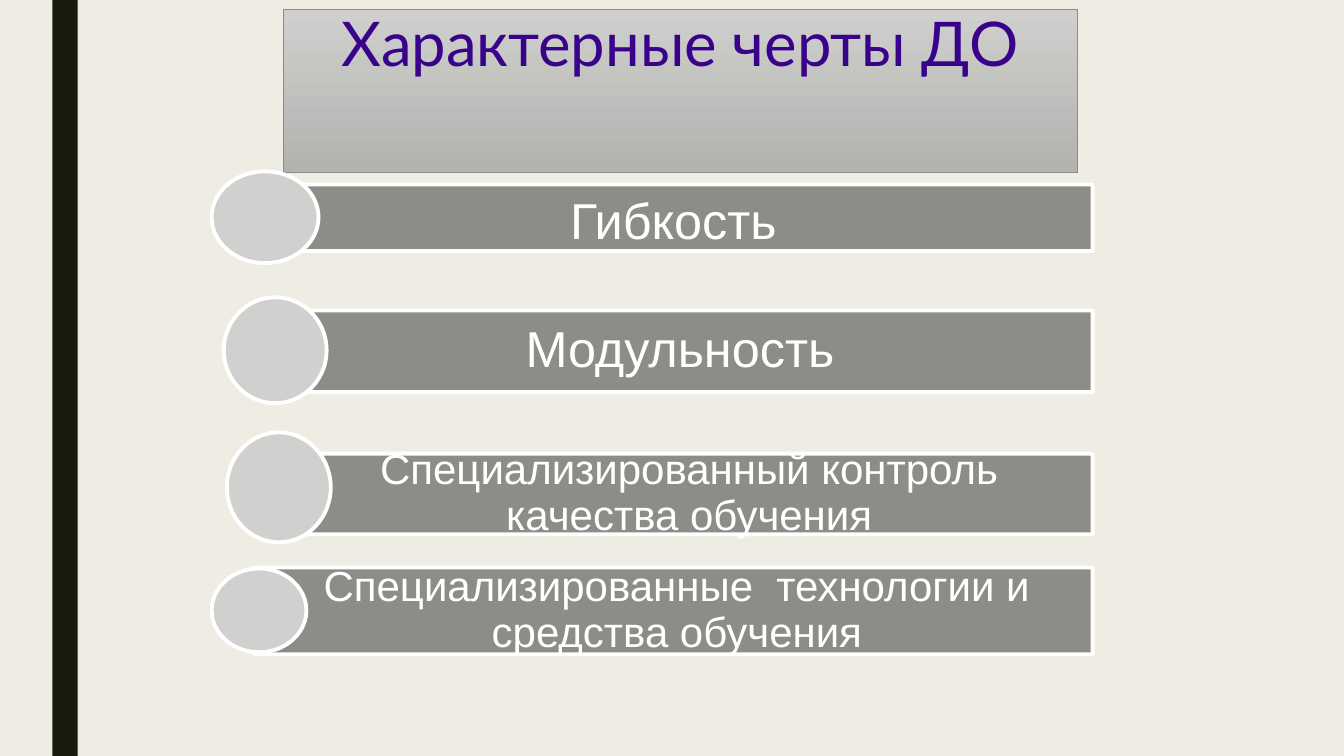
from pptx import Presentation
from pptx.dml.color import RGBColor
from pptx.enum.shapes import MSO_SHAPE
from pptx.enum.text import MSO_ANCHOR, PP_ALIGN
from pptx.util import Inches, Pt

RECTANGLE, OVAL, PLATE = MSO_SHAPE.RECTANGLE, MSO_SHAPE.OVAL, MSO_SHAPE.PENTAGON
TOP, MIDDLE, CENTER = MSO_ANCHOR.TOP, MSO_ANCHOR.MIDDLE, PP_ALIGN.CENTER

WIDTH, HEIGHT = Inches(13.333), Inches(7.5)
PAPER, BAND, BAR, DOT = "EFEDE3", "191B0E", "8C8D86", "D0D0CE"
WHITE, VIOLET = "FFFFFF", "39028A"
TITLE_FADE = ("CFCFCD", "B2B3AF")
BAR_RIGHT = 81.3

# Runs (text, size, font), bar (left, top, height), dot (left, top, width, height);
# all lengths are percentages of the slide.
FEATURES = [
    ([("Гибкость", 36, "Arial"), (" ", 48, "Lato")],
     (17.25, 24.4, 8.8), (15.75, 22.67, 7.95, 12.13)),
    ([("Модульность ", 36, "Arial")],
     (17.7, 41.07, 10.8), (16.65, 39.33, 7.65, 14)),
    ([("Специализированный контроль качества обучения", 30, "Arial")],
     (17.7, 60, 10.67), (16.88, 57.2, 7.73, 14.53)),
    ([("Специализированные  технологии и средства обучения", 30, "Arial")],
     (15.75, 75.07, 11.47), (15.75, 75.2, 7.05, 11.07)),
]


def color(value):
    return RGBColor.from_string(value)


def place(left, top, width, height):
    """Turn percentages of the slide into lengths."""
    return (int(WIDTH * left / 100), int(HEIGHT * top / 100),
            int(WIDTH * width / 100), int(HEIGHT * height / 100))


def add_figure(slide, kind, box, fill, line=None, weight=2.75):
    figure = slide.shapes.add_shape(kind, *place(*box))
    figure.shadow.inherit = False
    figure.fill.solid()
    figure.fill.fore_color.rgb = color(fill)
    if line:
        figure.line.color.rgb = color(line)
        figure.line.width = Pt(weight)
    else:
        figure.line.fill.background()
    return figure


def write(frame, runs, ink, anchor, spacing):
    frame.word_wrap = True
    frame.vertical_anchor = anchor
    paragraph = frame.paragraphs[0]
    paragraph.alignment = CENTER
    paragraph.line_spacing = spacing
    for words, size, font in runs:
        run = paragraph.add_run()
        run.text = words
        run.font.size = Pt(size)
        run.font.name = font
        run.font.color.rgb = color(ink)


def add_title(slide, words):
    title = add_figure(slide, RECTANGLE, (21.08, 1.2, 59.1, 21.6), BAR, BAR, 0.5)
    title.fill.gradient()
    title.fill.gradient_angle = 270
    for stop, shade in zip(title.fill.gradient_stops, TITLE_FADE):
        stop.color.rgb = color(shade)
    write(title.text_frame, [(words, 44, "Lato")], VIOLET, TOP, 0.89)


def add_feature(slide, runs, bar, dot):
    left, top, height = bar
    plate = add_figure(slide, PLATE, (left, top, BAR_RIGHT - left, height), BAR, WHITE)
    plate.rotation = 180

    # The label starts a quarter of the bar's height past its tip.
    start = left + height / 4 * HEIGHT / WIDTH
    label = slide.shapes.add_textbox(*place(start, top, BAR_RIGHT - start, height))
    frame, size = label.text_frame, runs[0][1]
    frame.margin_left = Inches(0.51)
    frame.margin_right = Pt(size * 0.56)
    frame.margin_top = frame.margin_bottom = Pt(size * 0.3)
    write(frame, runs, WHITE, MIDDLE, 0.9)

    add_figure(slide, OVAL, dot, DOT, WHITE)


def main():
    deck = Presentation()
    deck.slide_width, deck.slide_height = WIDTH, HEIGHT
    slide = deck.slides.add_slide(deck.slide_layouts[6])
    slide.background.fill.solid()
    slide.background.fill.fore_color.rgb = color(PAPER)

    add_figure(slide, RECTANGLE, (3.9, 0, 1.88, 100), BAND)
    add_title(slide, "Характерные черты ДО")
    for runs, bar, dot in FEATURES:
        add_feature(slide, runs, bar, dot)
    deck.save("out.pptx")


if __name__ == "__main__":
    main()
